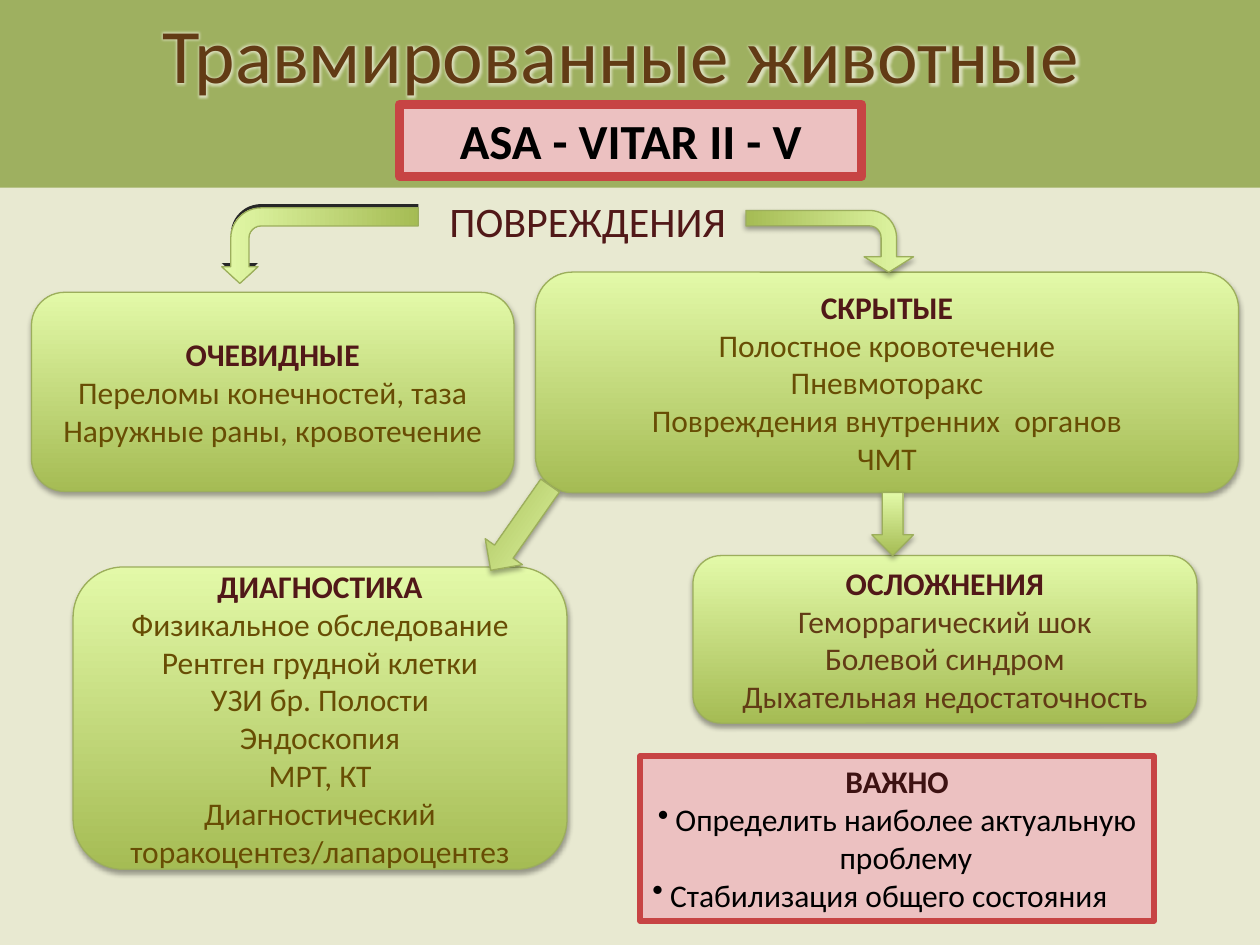
from lxml.etree import SubElement
from pptx import Presentation
from pptx.dml.color import RGBColor
from pptx.enum.shapes import MSO_SHAPE
from pptx.enum.text import MSO_ANCHOR, PP_ALIGN
from pptx.oxml.ns import qn
from pptx.util import Inches, Pt

PAGE = RGBColor(0xE8, 0xE9, 0xD1)
BAND = RGBColor(0x9E, 0xB0, 0x60)
GREEN_DARK = RGBColor(0xA5, 0xBC, 0x54)
GREEN_LIGHT = RGBColor(0xE3, 0xF9, 0xA8)
GREEN_LINE = RGBColor(0x9C, 0xAE, 0x5C)
PINK = RGBColor(0xEC, 0xC1, 0xC1)
RED = RGBColor(0xC7, 0x44, 0x44)
MAROON = RGBColor(0x51, 0x18, 0x18)
DARK_MAROON = RGBColor(0x3D, 0x12, 0x12)
OLIVE = RGBColor(0x68, 0x4D, 0x04)
BROWN = RGBColor(0x62, 0x3B, 0x15)
BLACK = RGBColor(0, 0, 0)
EDGE = RGBColor(0x26, 0x26, 0x26)

FONT = "Calibri"
TITLE = "Травмированные животные "
SCORE = "ASA - VITAR II - V"
SUBTITLE = "ПОВРЕЖДЕНИЯ"

# Place (left, top, width, height), body colour, heading, body lines
CARDS = [
    ((0.25, 2.32, 3.83, 1.58), OLIVE, "ОЧЕВИДНЫЕ",
     ["Переломы конечностей, таза", "Наружные раны, кровотечение"]),
    ((4.25, 2.16, 5.58, 1.75), OLIVE, "СКРЫТЫЕ",
     ["Полостное кровотечение", "Пневмоторакс",
      "Повреждения внутренних  органов", "ЧМТ"]),
    ((5.5, 4.41, 4, 1.33), BROWN, "ОСЛОЖНЕНИЯ",
     ["Геморрагический шок", "Болевой синдром", "Дыхательная недостаточность"]),
    ((0.58, 4.5, 3.92, 2.4), OLIVE, "ДИАГНОСТИКА",
     ["Физикальное обследование", "Рентген грудной клетки", "УЗИ бр. Полости",
      "Эндоскопия", "МРТ, КТ", "Диагностический торакоцентез/лапароцентез"]),
]
IMPORTANT = ("ВАЖНО", [
    ("Определить наиболее актуальную проблему", PP_ALIGN.CENTER),
    ("Стабилизация общего состояния", PP_ALIGN.LEFT),
])

# Preset, place before rotation, rotation, adjustments
ARROWS = [
    (MSO_SHAPE.BENT_ARROW, (6.34, 1.25, 0.49, 1.33), 90, (0.25, 0.4, 0.25, 0.44)),
    (MSO_SHAPE.DOWN_ARROW, (6.92, 3.91, 0.33, 0.5), 0, ()),
    (MSO_SHAPE.RIGHT_ARROW, (3.72, 4.01, 0.82, 0.36), 125, ()),
]
LEFT_ARROW = (2.24, 1.17, 0.6, 1.56)
LEFT_ARROW_ADJUSTMENTS = (0.24, 0.24, 0.22, 0.4)
EDGE_SHIFT = 0.03


def add_box(slide, preset, place, fill=None, line=None, width=0.75):
    shape = slide.shapes.add_shape(preset, *map(Inches, place))
    shape.shadow.inherit = False
    if fill is None:
        shape.fill.gradient()
        shape.fill.gradient_angle = 90
        for stop, color in zip(shape.fill.gradient_stops, (GREEN_DARK, GREEN_LIGHT)):
            stop.color.rgb = color
    else:
        shape.fill.solid()
        shape.fill.fore_color.rgb = fill
    if line is None:
        shape.line.fill.background()
    else:
        shape.line.color.rgb = line
        shape.line.width = Pt(width)
    return shape


def add_shadow(shape):
    effects = shape._element.spPr.find(qn("a:effectLst"))
    shadow = SubElement(effects, qn("a:outerShdw"), blurRad=str(Pt(3.1)),
                        dist=str(Pt(1.8)), dir="5400000", rotWithShape="0")
    color = SubElement(shadow, qn("a:srgbClr"), val="000000")
    SubElement(color, qn("a:alpha"), val="35000")


def add_glow(run):
    effects = SubElement(run._r.get_or_add_rPr(), qn("a:effectLst"))
    glow = SubElement(effects, qn("a:glow"), rad=str(Pt(5)))
    color = SubElement(glow, qn("a:srgbClr"), val=str(PAGE))
    SubElement(color, qn("a:alpha"), val="80000")


def write(shape, lines, anchor=MSO_ANCHOR.TOP):
    """Fill the shape with (text, size, colour, bold, alignment) lines."""
    frame = shape.text_frame
    frame.word_wrap = True
    frame.vertical_anchor = anchor
    for index, (text, size, color, bold, alignment) in enumerate(lines):
        paragraph = frame.add_paragraph() if index else frame.paragraphs[0]
        paragraph.text = text
        paragraph.alignment = alignment
        paragraph.font.name = FONT
        paragraph.font.size = Pt(size)
        paragraph.font.bold = bold
        paragraph.font.color.rgb = color
    return frame.paragraphs


def add_bullet(paragraph, indent):
    properties = paragraph._p.get_or_add_pPr()
    properties.set("marL", str(Inches(indent)))
    properties.set("indent", str(-Inches(indent)))
    bullet = properties.makeelement(qn("a:buChar"), {"char": "•"})
    properties.insert(0, bullet)


def add_arrow(slide, preset, place, rotation, adjustments, fill=None, line=GREEN_LINE):
    arrow = add_box(slide, preset, place, fill, line)
    arrow.rotation = rotation
    for index, value in enumerate(adjustments):
        arrow.adjustments[index] = value
    return arrow


def main():
    presentation = Presentation()
    presentation.slide_width, presentation.slide_height = Inches(10), Inches(7.5)
    slide = presentation.slides.add_slide(presentation.slide_layouts[6])
    slide.background.fill.solid()
    slide.background.fill.fore_color.rgb = PAGE
    center = PP_ALIGN.CENTER

    band = add_box(slide, MSO_SHAPE.RECTANGLE, (0, 0, 10, 1.49), BAND)
    title = write(band, [(TITLE, 44, BROWN, False, center)])[0]
    add_glow(title.runs[0])

    subtitle = slide.shapes.add_textbox(*map(Inches, (3.33, 1.5, 2.67, 0.5)))
    write(subtitle, [(SUBTITLE, 24, MAROON, False, center)])

    for place, color, heading, body in CARDS:
        card = add_box(slide, MSO_SHAPE.ROUNDED_RECTANGLE, place, line=GREEN_LINE)
        add_shadow(card)
        lines = [(heading, 18, MAROON, True, center)]
        lines += [(text, 18, color, False, center) for text in body]
        write(card, lines, MSO_ANCHOR.MIDDLE)

    heading, points = IMPORTANT
    important = add_box(slide, MSO_SHAPE.RECTANGLE, (5.08, 6, 4.08, 1.31), PINK, RED, 3)
    lines = [(heading, 18, DARK_MAROON, True, center)]
    lines += [(text, 18, BLACK, False, alignment) for text, alignment in points]
    for paragraph in write(important, lines)[1:]:
        add_bullet(paragraph, 0.14)

    score = add_box(slide, MSO_SHAPE.RECTANGLE, (3.17, 0.83, 3.67, 0.57), PINK, RED, 5)
    write(score, [(SCORE, 28, BLACK, True, center)])

    for arrow in ARROWS:
        add_shadow(add_arrow(slide, *arrow))

    # The left arrow has a dark edge above it and turns the other way
    left, top, width, height = LEFT_ARROW
    for shift, fill, line in ((EDGE_SHIFT, EDGE, None), (0, None, GREEN_LINE)):
        arrow = add_arrow(slide, MSO_SHAPE.BENT_ARROW, (left, top - shift, width, height),
                          270, LEFT_ARROW_ADJUSTMENTS, fill, line)
        arrow._element.spPr.xfrm.set("flipH", "1")

    presentation.save("out.pptx")


if __name__ == "__main__":
    main()
